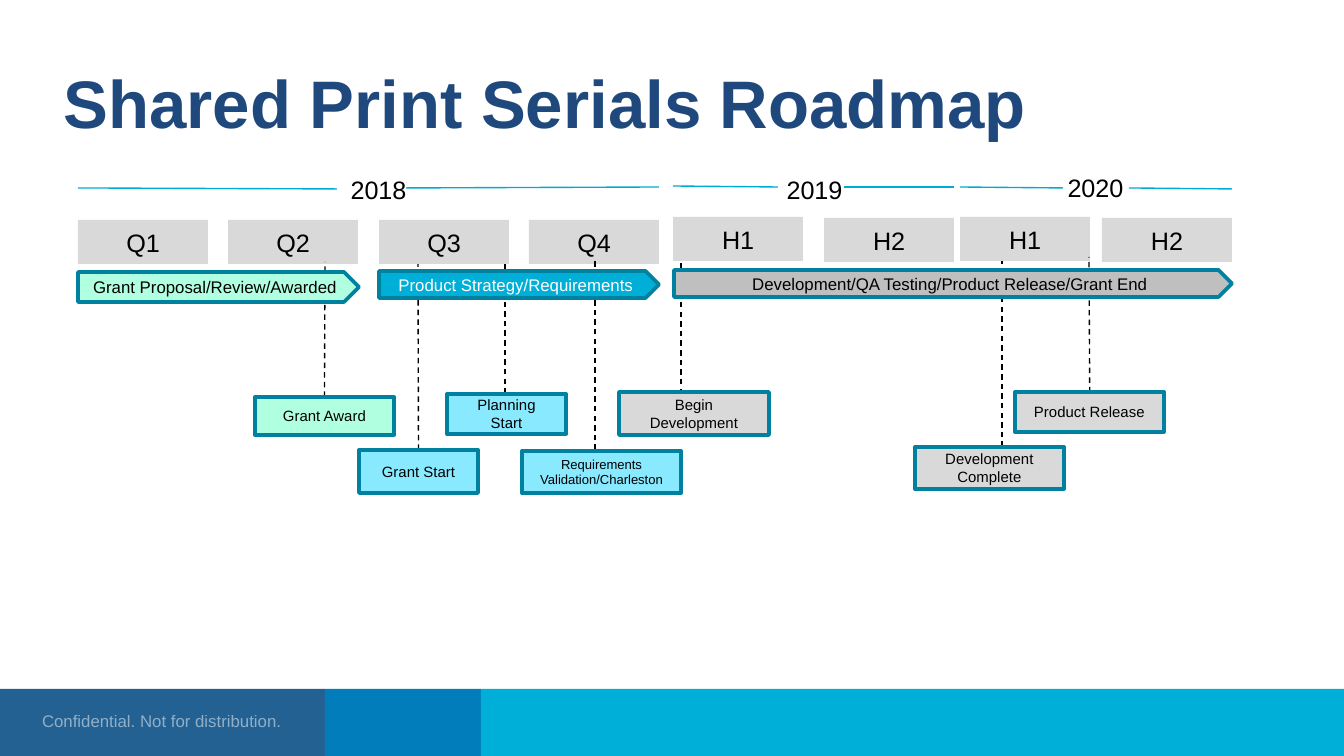
from lxml import etree
from pptx import Presentation
from pptx.dml.color import RGBColor
from pptx.enum.dml import MSO_LINE
from pptx.enum.shapes import MSO_CONNECTOR, MSO_SHAPE
from pptx.enum.text import MSO_ANCHOR, MSO_AUTO_SIZE, PP_ALIGN
from pptx.oxml.ns import qn
from pptx.util import Emu, Pt

RECT, ARROW = MSO_SHAPE.RECTANGLE, MSO_SHAPE.PENTAGON
STRAIGHT = MSO_CONNECTOR.STRAIGHT
DASH = MSO_LINE.DASH
TOP, MIDDLE = MSO_ANCHOR.TOP, MSO_ANCHOR.MIDDLE
LEFT, CENTER = PP_ALIGN.LEFT, PP_ALIGN.CENTER
EMU_PER_PX = 914400 / 134.4

FONT = "Arial"
BLACK, WHITE, NAVY = "000000", "FFFFFF", "1F497D"
GRAY, MID_GRAY = "D9D9D9", "BFBFBF"
MINT, SKY, CYAN = "B1FFE1", "89E9FF", "00AFD7"
BORDER, YEAR_LINE = "00819F", "00ABD2"

FOOTER_BARS = [(0, 325, "236192"), (325, 156, "007DBA"), (481, 863, CYAN)]
YEARS = [
    ("2018", 337, 167, [(78, 188, 337, 189), (406, 188, 659, 187)]),
    ("2019", 773, 167, [(673, 186, 778, 187), (844, 187, 954, 187)]),
    ("2020", 1054, 165, [(960, 187, 1063, 188), (1129, 188, 1232, 189)]),
]
PERIODS = [
    ("Q1", 78, 220), ("Q2", 228, 220), ("Q3", 379, 220), ("Q4", 529, 220),
    ("H1", 673, 217), ("H2", 824, 218), ("H1", 960, 217), ("H2", 1102, 218),
]
PHASES = [
    ("Grant Proposal/Review/Awarded", 78, 272, 281, 30, MINT, BLACK),
    ("Product Strategy/Requirements", 379, 271, 280, 27, CYAN, WHITE),
    ("Development/QA Testing/Product Release/Grant End", 674, 270, 558, 27, MID_GRAY, BLACK),
]
MILESTONES = [
    ("Grant Award", 255, 397, 139, 38, MINT, 8),
    ("Grant Start", 359, 450, 119, 43, SKY, 8),
    ("Requirements Validation/Charleston", 522, 451, 159, 42, SKY, 7),
    ("Planning Start", 447, 394, 119, 40, SKY, 8),
    ("Begin Development", 619, 392, 150, 43, GRAY, 8),
    ("Product Release", 1015, 392, 149, 40, GRAY, 8),
    ("Development Complete", 915, 447, 149, 42, GRAY, 8),
]
DROPS_BEHIND_PERIODS = {
    "Development Complete": (1002, 447, 1002, 257),
    "Planning Start": (505, 413, 505, 261),
    "Grant Start": (418, 450, 418, 258),
}
DROPS_OVER_PERIODS = {
    "Grant Award": (324, 397, 325, 262),
    "Requirements Validation/Charleston": (595, 450, 595, 261),
    "Begin Development": (681, 423, 681, 260),
    "Product Release": (1090, 431, 1089, 257),
}
JOINED = ("Grant Award", "Grant Start")


def px(n):
    return Emu(round(n * EMU_PER_PX))


def rgb(value):
    return RGBColor.from_string(value)


def write(s, text, size, color=BLACK, bold=False, align=CENTER, anchor=MIDDLE):
    tf = s.text_frame
    tf.word_wrap = True
    tf.auto_size = MSO_AUTO_SIZE.NONE
    tf.vertical_anchor = anchor
    tf.text = text
    p = tf.paragraphs[0]
    p.alignment = align
    r = p.runs[0]
    r.font.name = FONT
    r.font.size = Pt(size)
    r.font.bold = bold
    r.font.color.rgb = rgb(color)
    return r


def add_box(slide, kind, x, y, w, h, fill, border=None):
    s = slide.shapes.add_shape(kind, px(x), px(y), px(w), px(h))
    s.shadow.inherit = False
    s.fill.solid()
    s.fill.fore_color.rgb = rgb(fill)
    if border:
        s.line.color.rgb = rgb(border)
        s.line.width = Pt(2)
    else:
        s.line.fill.background()
    return s


def add_label(slide, x, y, w, h, text, size, **style):
    s = slide.shapes.add_textbox(px(x), px(y), px(w), px(h))
    return write(s, text, size, **style)


def add_line(slide, ends, color, dash=None):
    c = slide.shapes.add_connector(STRAIGHT, *(px(n) for n in ends))
    c.line.color.rgb = rgb(color)
    c.line.width = Pt(0.75)
    if dash:
        c.line.dash_style = dash
    etree.SubElement(c._element.spPr, qn("a:effectLst"))
    return c


def add_drops(slide, drops):
    return {name: add_line(slide, ends, BLACK, DASH) for name, ends in drops.items()}


def add_title(slide, text):
    s = slide.shapes.title
    s.left, s.top, s.width, s.height = px(50), px(51), px(1240), px(101)
    write(s, text, 36, NAVY, bold=True, align=LEFT)


def add_footer(slide):
    for x, w, fill in FOOTER_BARS:
        add_box(slide, RECT, x, 689, w, 67, fill)
    r = add_label(slide, 1, 704, 321, 43, "Confidential. Not for distribution.", 9,
                  color=WHITE, anchor=TOP)
    color = r._r.rPr.find(qn("a:solidFill")).find(qn("a:srgbClr"))
    etree.SubElement(color, qn("a:alpha")).set("val", "50000")


def add_timeline(slide):
    for year, x, y, lines in YEARS:
        for ends in lines:
            add_line(slide, ends, YEAR_LINE)
        add_label(slide, x, y, 83, 44, year, 13.5)
    for name, x, y in PERIODS:
        write(add_box(slide, RECT, x, y, 130, 44, GRAY), name, 13.5)


def add_phases(slide):
    for name, x, y, w, h, fill, color in PHASES:
        write(add_box(slide, ARROW, x, y, w, h, fill, BORDER), name, 9, color)


def add_milestones(slide, drops):
    for name, x, y, w, h, fill, size in MILESTONES:
        s = add_box(slide, RECT, x, y, w, h, fill, BORDER)
        write(s, name, size)
        if name in JOINED:
            drops[name].begin_connect(s, 0)


def main():
    prs = Presentation()
    prs.slide_width, prs.slide_height = px(1344), px(756)
    slide = prs.slides.add_slide(prs.slide_layouts[5])
    add_footer(slide)
    add_title(slide, "Shared Print Serials Roadmap")
    drops = add_drops(slide, DROPS_BEHIND_PERIODS)
    add_timeline(slide)
    drops.update(add_drops(slide, DROPS_OVER_PERIODS))
    add_phases(slide)
    add_milestones(slide, drops)
    prs.save("out.pptx")


if __name__ == "__main__":
    main()
